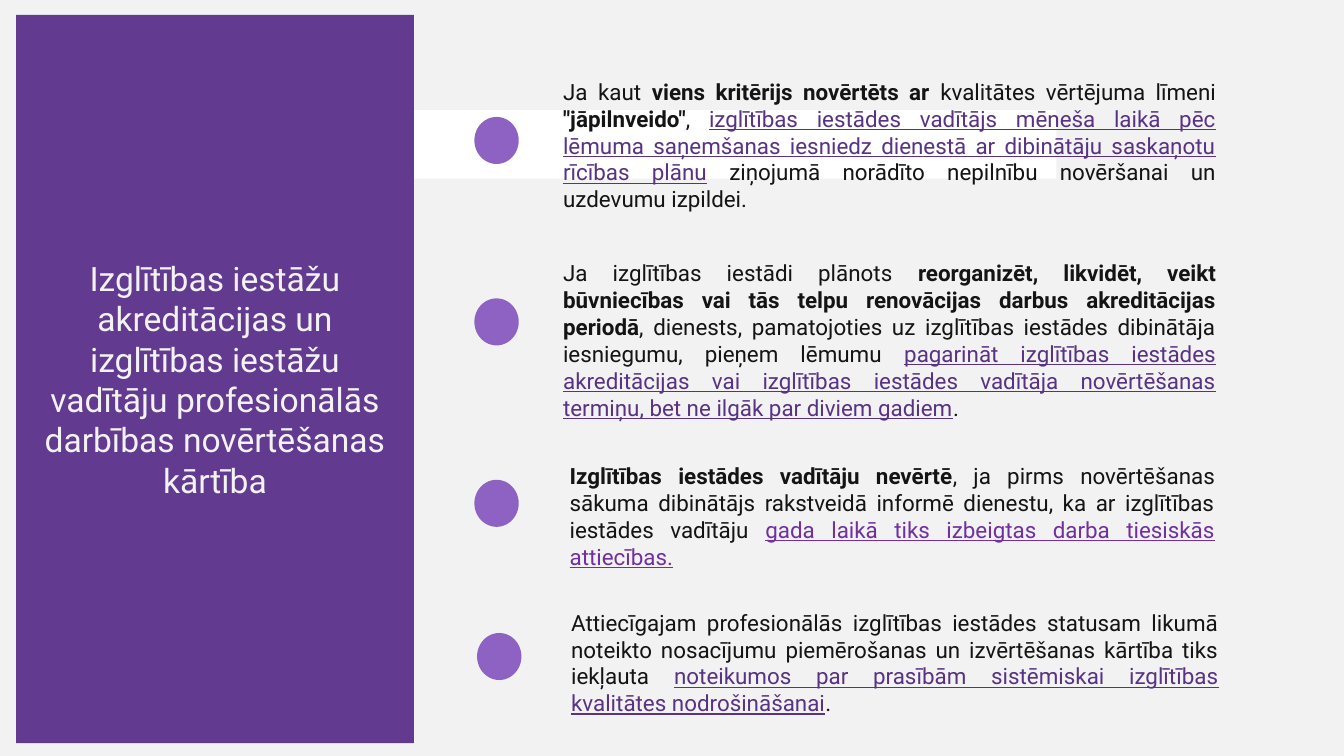
from pptx import Presentation
from pptx.dml.color import RGBColor
from pptx.enum.shapes import MSO_SHAPE
from pptx.enum.text import MSO_ANCHOR, MSO_AUTO_SIZE, PP_ALIGN
from pptx.util import Inches, Pt

RECT, OVAL = MSO_SHAPE.RECTANGLE, MSO_SHAPE.OVAL
TOP, MIDDLE = MSO_ANCHOR.TOP, MSO_ANCHOR.MIDDLE
CENTER, JUSTIFY = PP_ALIGN.CENTER, PP_ALIGN.JUSTIFY
GROW = MSO_AUTO_SIZE.SHAPE_TO_FIT_TEXT

FONT = "Roboto"
COLORS = {
    "background": "F2F2F2",
    "band": "FFFFFF",
    "panel": "623A90",
    "dot": "8E62C2",
    "text": "141414",
    "accent": "583384",
    "violet": "7030A0",
}
DOT_W, DOT_H = 0.33, 0.35

TITLE = ("Izglītības iestāžu akreditācijas un izglītības iestāžu vadītāju "
         "profesionālās darbības novērtēšanas kārtība")

# Run styles
PLAIN = {}
BOLD = {"bold": True}
LINK = {"color": "accent", "underline": True}
VIOLET_LINK = {"color": "violet", "underline": True}

# Each rule: dot position, text box, text options, runs
RULES = [
    ((3.53, 0.87), (4.12, 0.71, 5, 0.74), {}, [
        ("Ja kaut ", PLAIN),
        ("viens kritērijs novērtēts ar", BOLD),
        (" kvalitātes vērtējuma līmeni ", PLAIN),
        ('"jāpilnveido"', BOLD),
        (", ", PLAIN),
        ("izglītības iestādes vadītājs mēneša laikā pēc lēmuma saņemšanas "
         "iesniedz dienestā ar dibinātāju saskaņotu rīcības plānu", LINK),
        (" ziņojumā norādīto nepilnību novēršanai un uzdevumu izpildei.", PLAIN),
    ]),
    ((3.53, 2.22), (4.12, 2.1, 5, 0.86), {}, [
        ("Ja izglītības iestādi plānots ", PLAIN),
        ("reorganizēt, likvidēt, veikt būvniecības vai tās telpu renovācijas "
         "darbus akreditācijas periodā", BOLD),
        (", dienests, pamatojoties uz izglītības iestādes dibinātāja "
         "iesniegumu, pieņem lēmumu ", PLAIN),
        ("pagarināt izglītības iestādes akreditācijas vai izglītības iestādes "
         "vadītāja novērtēšanas termiņu, bet ne ilgāk par diviem gadiem", LINK),
        (".", PLAIN),
    ]),
    ((3.53, 3.57), (4.14, 3.39, 5, 0.9),
     {"anchor": TOP, "insets": (0.1, 0.05), "after": 0, "grow": True}, [
        ("Izglītības iestādes vadītāju nevērtē", BOLD),
        (", ja pirms novērtēšanas sākuma dibinātājs rakstveidā informē "
         "dienestu, ka ar izglītības iestādes vadītāju ", PLAIN),
        ("gada laikā tiks izbeigtas darba tiesiskās attiecības.", VIOLET_LINK),
    ]),
    ((3.55, 4.71), (4.18, 4.56, 4.96, 0.74), {}, [
        ("Attiecīgajam profesionālās izglītības iestādes statusam likumā "
         "noteikto nosacījumu piemērošanas un izvērtēšanas kārtība tiks "
         "iekļauta ", PLAIN),
        ("noteikumos par prasībām sistēmiskai izglītības kvalitātes "
         "nodrošināšanai", LINK),
        (".", PLAIN),
    ]),
]


def rgb(name):
    return RGBColor.from_string(COLORS[name])


def add_filled(s, kind, box, color):
    sp = s.shapes.add_shape(kind, *map(Inches, box))
    sp.shadow.inherit = False
    sp.fill.solid()
    sp.fill.fore_color.rgb = rgb(color)
    sp.line.fill.background()
    return sp


def add_run(p, text, size=12, color="text", bold=False, underline=False):
    r = p.add_run()
    r.text = text
    f = r.font
    f.name, f.size, f.bold, f.underline = FONT, Pt(size), bold, underline
    f.color.rgb = rgb(color)


def write_text(sp, runs, align=JUSTIFY, anchor=MIDDLE, insets=(0.07, 0.03),
               after=5.5, grow=False):
    tf = sp.text_frame
    tf.word_wrap = True
    tf.vertical_anchor = anchor
    tf.margin_left = tf.margin_right = Inches(insets[0])
    tf.margin_top = tf.margin_bottom = Inches(insets[1])
    if grow:
        tf.auto_size = GROW
    p = tf.paragraphs[0]
    p.alignment = align
    p.space_after = Pt(after)
    for text, style in runs:
        add_run(p, text, **style)


def add_layout_band(s, box):
    # Layouts have no add_shape, so the band is made on the slide and moved
    sp = add_filled(s, RECT, box, "band")
    s.slide_layout.shapes.element.append(sp.element)


def add_title_panel(s, box):
    sp = add_filled(s, RECT, box, "panel")
    write_text(sp, [(TITLE, {"size": 18, "color": "background"})],
               align=CENTER, insets=(0.09, 0.04), after=0)


def add_rule(s, dot, box, options, runs):
    add_filled(s, OVAL, (*dot, DOT_W, DOT_H), "dot")
    write_text(s.shapes.add_textbox(*map(Inches, box)), runs, **options)


def main():
    prs = Presentation()
    prs.slide_width = Inches(10)
    prs.slide_height = prs.slide_width * 9 // 16
    s = prs.slides.add_slide(prs.slide_layouts[6])
    s.background.fill.solid()
    s.background.fill.fore_color.rgb = rgb("background")

    # White band behind the panel and the first rule
    add_layout_band(s, (2.13, 0.82, 5.73, 0.51))
    # Title panel on the left
    add_title_panel(s, (0.12, 0.11, 2.96, 5.42))
    # Rules on the right
    for rule in RULES:
        add_rule(s, *rule)

    prs.save("out.pptx")


if __name__ == "__main__":
    main()
